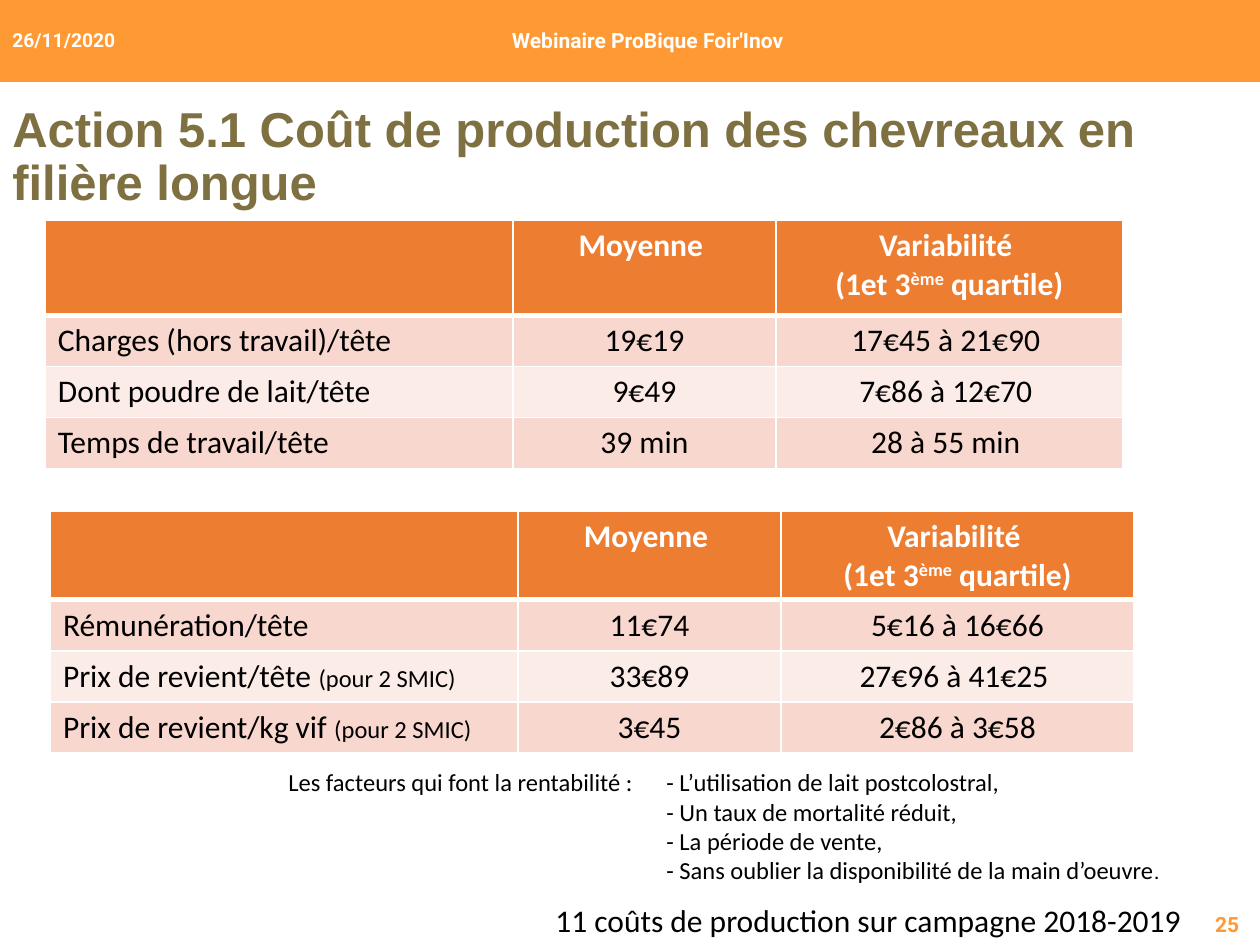
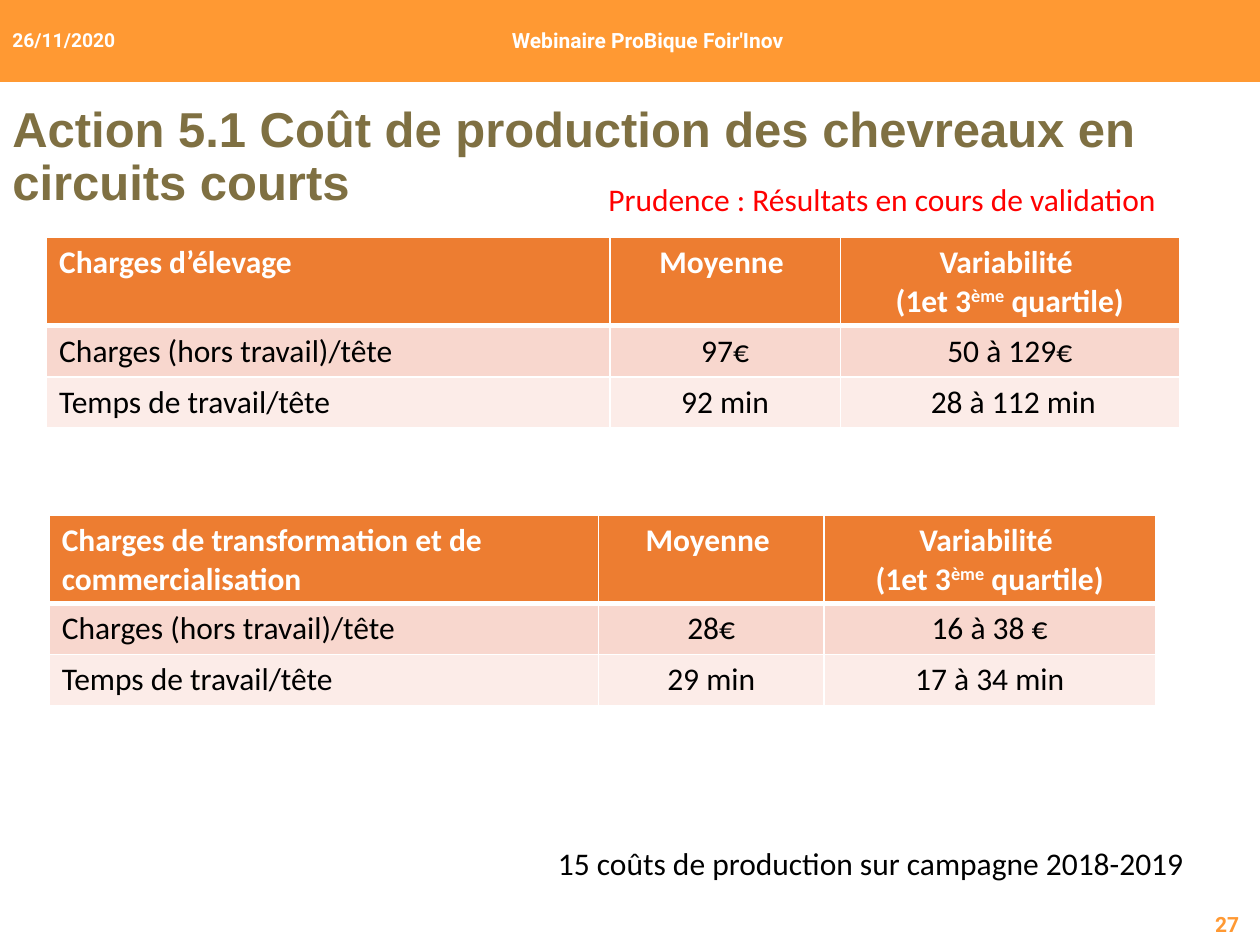
"""Build two slides on the production cost of goat kids, with a shared banner and title style."""
import lxml.etree
import pptx
import pptx.dml.color
import pptx.enum.shapes
import pptx.enum.text
import pptx.oxml.ns
import pptx.util

RGBColor = pptx.dml.color.RGBColor
ORANGE = RGBColor(0xFF, 0x99, 0x33)
OLIVE = RGBColor(0x7F, 0x70, 0x42)
HEADER_ORANGE = RGBColor(0xED, 0x7D, 0x31)
DARK_ROW = RGBColor(0xF8, 0xD7, 0xCE)
LIGHT_ROW = RGBColor(0xFC, 0xEC, 0xE8)
WHITE = RGBColor(0xFF, 0xFF, 0xFF)
BLACK = RGBColor(0x00, 0x00, 0x00)
RED = RGBColor(0xFF, 0x00, 0x00)
LEFT = pptx.enum.text.PP_ALIGN.LEFT
CENTER = pptx.enum.text.PP_ALIGN.CENTER
TOP = pptx.enum.text.MSO_ANCHOR.TOP
MIDDLE = pptx.enum.text.MSO_ANCHOR.MIDDLE

presentation = pptx.Presentation()
presentation.slide_width = pptx.util.Inches(10)
presentation.slide_height = pptx.util.Inches(7.5)
GRID = presentation.slide_width // 100
ROW_HEIGHT = 4.05

VARIABILITY = ["Variabilité ", [("(1et 3", {}), ("ème", {"baseline": "30000"}), (" quartile)", {})]]
SMALL = ("(pour 2 SMIC)", {"sz": "1400"})

SLIDES = [
    {
        "title": "Action 5.1 Coût de production des chevreaux en filière longue",
        "number": "25",
        "tables": [
            (3.6, 17.5, [37.1, 20.9, 27.5], 7.55, "", [
                ["Charges (hors travail)/tête", "19€19", "17€45 à 21€90 "],
                ["Dont poudre de lait/tête", "9€49", "7€86 à 12€70 "],
                ["Temps de travail/tête", "39 min", "28 à 55 min "]]),
            (4, 40.6, [37.1, 20.9, 28], 7, "", [
                ["Rémunération/tête", "11€74", "5€16 à 16€66"],
                [[("Prix de revient/tête ", {}), SMALL], "33€89", "27€96 à 41€25 "],
                [[("Prix de revient/kg vif ", {}), SMALL], "3€45", "2€86 à 3€58"]]),
        ],
        "notes": [
            (43.1, 71, 52.6, "11 coûts de production sur campagne 2018-2019", BLACK)],
        "factors": [
            "Les facteurs qui font la rentabilité :\t- L’utilisation de lait postcolostral,",
            "- Un taux de mortalité réduit,",
            "- La période de vente,",
            [("- Sans oublier la disponibilité de la main d’oeuvre", {}), (".", {"sz": "1200"})]],
    },
    {
        "title": "Action 5.1 Coût de production des chevreaux en circuits courts",
        "number": "27",
        "tables": [
            (3.7, 18.85, [44.7, 18.3, 26.9], 7, "Charges d’élevage", [
                ["Charges (hors travail)/tête", "97€", "50 à 129€"],
                ["Temps de travail/tête", "92 min", " 28 à 112 min"]]),
            (3.9, 40.9, [43.6, 17.9, 26.3], 7, "Charges de transformation et de commercialisation", [
                ["Charges (hors travail)/tête", "28€", "16 à 38 €"],
                ["Temps de travail/tête", "29 min", "17 à 34 min"]]),
        ],
        "notes": [
            (43.3, 66.5, 52.6, "15 coûts de production sur campagne 2018-2019", BLACK),
            (47.3, 13.8, 52, "Prudence : Résultats en cours de validation", RED)],
        "factors": [],
    },
]


def write(frame, lines, font_name, size, color, bold=False, alignment=LEFT):
    """Fill a text frame with lines, each a string or a list of runs with their attributes."""
    frame.word_wrap = True
    for index, line in enumerate(lines):
        paragraph = frame.paragraphs[0] if index == 0 else frame.add_paragraph()
        paragraph.alignment = alignment
        paragraph.font.name = font_name
        paragraph.font.size = pptx.util.Pt(size)
        paragraph.font.bold = bold
        paragraph.font.color.rgb = color
        for text, attributes in [(line, {})] if isinstance(line, str) else line:
            run = paragraph.add_run()
            run.text = text
            for name, value in attributes.items():
                run.font._element.set(name, value)


def add_text(slide, left, top, width, height, anchor=TOP):
    """Add a text box measured in grid units and return its text frame."""
    box = slide.shapes.add_textbox(*(round(length * GRID) for length in (left, top, width, height)))
    box.text_frame.vertical_anchor = anchor
    return box.text_frame


for content in SLIDES:
    slide = presentation.slides.add_slide(presentation.slide_layouts[6])

    banner = slide.shapes.add_shape(
        pptx.enum.shapes.MSO_SHAPE.RECTANGLE, 0, 0, presentation.slide_width, round(6.5 * GRID))
    banner.shadow.inherit = False
    banner.fill.solid()
    banner.fill.fore_color.rgb = ORANGE
    banner.line.fill.background()

    title = add_text(slide, 0, 5.3, 100, 14.5, MIDDLE)
    write(title, [content["title"]], "Arial", 28, OLIVE, True)
    title.paragraphs[0].line_spacing = 0.9

    write(add_text(slide, 13.7, 0, 75.4, 6.4, MIDDLE),
          ["Webinaire ProBique Foir'Inov"], "Roboto", 12, WHITE, True, CENTER)
    write(add_text(slide, 94.9, 71.7, 5, 3.3, MIDDLE),
          [content["number"]], "Roboto", 12, ORANGE, True, CENTER)
    write(add_text(slide, 0, 0, 13.7, 6.4, MIDDLE),
          ["26/11/2020"], "Roboto", 11, WHITE, True)

    for left, top, widths, header_height, heading, body in content["tables"]:
        rows = [[heading, "Moyenne ", VARIABILITY]] + body
        heights = [header_height] + [ROW_HEIGHT] * len(body)
        frame = slide.shapes.add_table(
            len(rows), len(widths),
            *(round(length * GRID) for length in (left, top, sum(widths), sum(heights))))
        table = frame.table
        for column, width in zip(table.columns, widths):
            column.width = round(width * GRID)
        for row_index, (row, height) in enumerate(zip(rows, heights)):
            table.rows[row_index].height = round(height * GRID)
            is_header = row_index == 0
            for column_index, value in enumerate(row):
                cell = table.cell(row_index, column_index)
                properties = cell._tc.get_or_add_tcPr()
                for side in "LRTB":
                    thick = (side == "B" and is_header) or (side == "T" and row_index == 1)
                    border = lxml.etree.SubElement(
                        properties, pptx.oxml.ns.qn("a:ln" + side),
                        w=str(pptx.util.Pt(3 if thick else 1)))
                    fill = lxml.etree.SubElement(border, pptx.oxml.ns.qn("a:solidFill"))
                    lxml.etree.SubElement(fill, pptx.oxml.ns.qn("a:srgbClr"), val=str(WHITE))
                cell.fill.solid()
                cell.fill.fore_color.rgb = (
                    HEADER_ORANGE if is_header else DARK_ROW if row_index % 2 else LIGHT_ROW)
                write(cell.text_frame, value if value is VARIABILITY else [value], "Calibri", 18,
                      WHITE if is_header else BLACK, is_header, CENTER if column_index else LEFT)

    if content["factors"]:
        factors = add_text(slide, 21.9, 60.4, 76.8, 10.4)
        tab_position = str(30 * GRID)
        properties = factors.paragraphs[0]._p.get_or_add_pPr()
        tabs = lxml.etree.SubElement(properties, pptx.oxml.ns.qn("a:tabLst"))
        lxml.etree.SubElement(tabs, pptx.oxml.ns.qn("a:tab"), pos=tab_position, algn="l")
        write(factors, content["factors"], "Calibri", 14, BLACK)
        for paragraph in factors.paragraphs[1:]:
            paragraph._p.get_or_add_pPr().set("marL", tab_position)

    for left, top, width, note, color in content["notes"]:
        write(add_text(slide, left, top, width, 4), [note], "Calibri", 18, color)

presentation.save("out.pptx")
